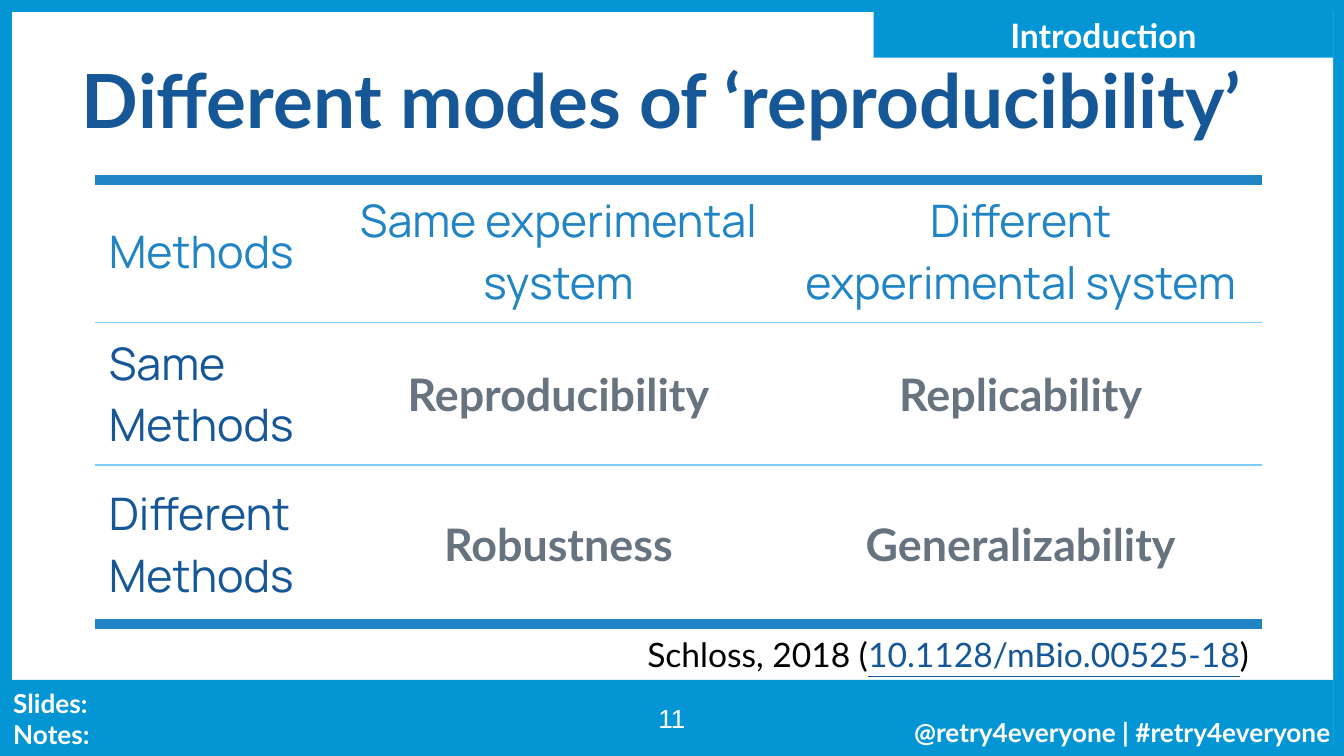
import lxml.etree
import pptx
import pptx.dml.color
import pptx.enum.shapes
import pptx.enum.text
import pptx.oxml.ns
import pptx.util

Inches = pptx.util.Inches
Pt = pptx.util.Pt
RGBColor = pptx.dml.color.RGBColor
Align = pptx.enum.text.PP_ALIGN
Anchor = pptx.enum.text.MSO_ANCHOR

SKY = RGBColor(0x04, 0x96, 0xD4)
BLUE = RGBColor(0x21, 0x85, 0xC5)
PALE = RGBColor(0x7E, 0xCE, 0xFD)
NAVY = RGBColor(0x16, 0x57, 0x97)
GREY = RGBColor(0x67, 0x74, 0x80)
WHITE = RGBColor(0xFF, 0xFF, 0xFF)
BLACK = RGBColor(0, 0, 0)

THICK = (BLUE, 6)
THIN = (PALE, 0.75)


class SlideBuilder:
    font = "Lato"

    def __init__(self, deck):
        self.page = deck.slides.add_slide(deck.slide_layouts[5])
        fill = self.page.background.fill
        fill.solid()
        fill.fore_color.rgb = SKY

    def span(self, para, text, size, color, bold=False, underline=False, font=None):
        span = para.add_run()
        span.text = text
        span.font.name = font or self.font
        span.font.size = Pt(size)
        span.font.color.rgb = color
        span.font.bold = bold
        span.font.underline = underline

    def frame(self, box, anchor=Anchor.MIDDLE):
        frame = box.text_frame
        frame.word_wrap = True
        frame.auto_size = pptx.enum.text.MSO_AUTO_SIZE.NONE
        frame.vertical_anchor = anchor
        frame.margin_left = frame.margin_right = Inches(0.1)
        frame.margin_top = frame.margin_bottom = Inches(0.1)
        return frame

    def title(self, left, top, width, height, text):
        box = self.page.shapes.title
        self.page.shapes._spTree.append(box._element)
        box.left, box.top = Inches(left), Inches(top)
        box.width, box.height = Inches(width), Inches(height)
        para = self.frame(box, Anchor.BOTTOM).paragraphs[0]
        para.alignment = Align.LEFT
        self.span(para, text, 40, NAVY, bold=True)

    def panel(self, left, top, width, height, color):
        box = self.page.shapes.add_shape(
            pptx.enum.shapes.MSO_SHAPE.RECTANGLE,
            Inches(left), Inches(top), Inches(width), Inches(height))
        box.shadow.inherit = False
        box.fill.solid()
        box.fill.fore_color.rgb = color
        box.line.fill.background()
        return box

    def label(self, left, top, width, height, lines, align, **style):
        box = self.page.shapes.add_textbox(
            Inches(left), Inches(top), Inches(width), Inches(height))
        frame = self.frame(box)
        for index, line in enumerate(lines):
            para = frame.add_paragraph() if index else frame.paragraphs[0]
            para.alignment = align
            self.span(para, line, 14, WHITE, **style)

    def border(self, cell, top, bottom):
        properties = cell._tc.get_or_add_tcPr()
        sides = [("a:lnL", None), ("a:lnR", None), ("a:lnT", top), ("a:lnB", bottom)]
        for index, (tag, stroke) in enumerate(sides):
            line = lxml.etree.Element(pptx.oxml.ns.qn(tag))
            if stroke:
                color, width = stroke
                line.set("w", str(Pt(width)))
                fill = lxml.etree.SubElement(line, pptx.oxml.ns.qn("a:solidFill"))
                lxml.etree.SubElement(fill, pptx.oxml.ns.qn("a:srgbClr"), val=str(color))
            else:
                lxml.etree.SubElement(line, pptx.oxml.ns.qn("a:noFill"))
            properties.insert(index, line)

    def table(self, left, top, widths, heights, rows):
        table = self.page.shapes.add_table(
            len(rows), len(widths), Inches(left), Inches(top),
            Inches(sum(widths)), Inches(sum(heights))).table
        table.first_row = table.horz_banding = False
        for column, width in zip(table.columns, widths):
            column.width = Inches(width)
        for row, height in zip(table.rows, heights):
            row.height = Inches(height)
        last = len(rows) - 1
        for i, texts in enumerate(rows):
            for j, text in enumerate(texts):
                cell = table.cell(i, j)
                cell.fill.background()
                self.border(cell, THIN if i else THICK, THICK if i == last else THIN)
                cell.vertical_anchor = Anchor.MIDDLE
                cell.margin_left = cell.margin_right = Inches(0.1)
                cell.margin_top = cell.margin_bottom = Inches(0.07)
                para = cell.text_frame.paragraphs[0]
                para.alignment = Align.CENTER if j else Align.LEFT
                if i and j:
                    self.span(para, text, 24, GREY, bold=True)
                else:
                    self.span(para, text, 24, NAVY if i else BLUE, font="Manrope")

    def section_tag(self, left, top, width, height, text):
        box = self.panel(left, top, width, height, SKY)
        para = self.frame(box).paragraphs[0]
        para.alignment = Align.CENTER
        para.space_before = Pt(6)
        self.span(para, text, 18, WHITE, bold=True)

    def citation(self, left, top, width, height, before, reference, after):
        box = self.panel(left, top, width, height, WHITE)
        para = self.frame(box).paragraphs[0]
        para.alignment = Align.RIGHT
        self.span(para, before, 18, BLACK)
        self.span(para, reference, 18, NAVY, underline=True)
        self.span(para, after, 18, BLACK)


def main():
    deck = pptx.Presentation()
    deck.slide_width = Inches(10)
    deck.slide_height = deck.slide_width * 9 // 16
    slide = SlideBuilder(deck)
    slide.panel(0.09, 0.09, 9.83, 5.46, WHITE)
    slide.panel(0.08, 5.06, 9.84, 0.57, SKY)
    slide.label(0, 5.06, 0.78, 0.57, ["Slides:", "Notes:"], Align.LEFT, bold=True)
    slide.label(5.93, 5.31, 4.07, 0.27, ["@retry4everyone | #retry4everyone"],
                Align.RIGHT, bold=True)
    slide.title(0.51, 0.23, 9.02, 0.94, "Different modes of ‘reproducibility’")
    slide.table(0.71, 1.34, [1.8, 3.29, 3.59], [1.06, 1.06, 1.18], [
        ["Methods", "Same experimental system", "Different experimental system"],
        ["Same Methods", "Reproducibility", "Replicability"],
        ["Different Methods", "Robustness", "Generalizability"],
    ])
    slide.label(4.7, 5.06, 0.6, 0.57, ["11"], Align.CENTER, font="Arial")
    slide.section_tag(6.5, 0.09, 3.42, 0.34, "Introduction")
    slide.citation(0.71, 4.77, 8.68, 0.2, "Schloss, 2018 (", "10.1128/mBio.00525-18", ")")
    deck.save("out.pptx")


if __name__ == "__main__":
    main()
